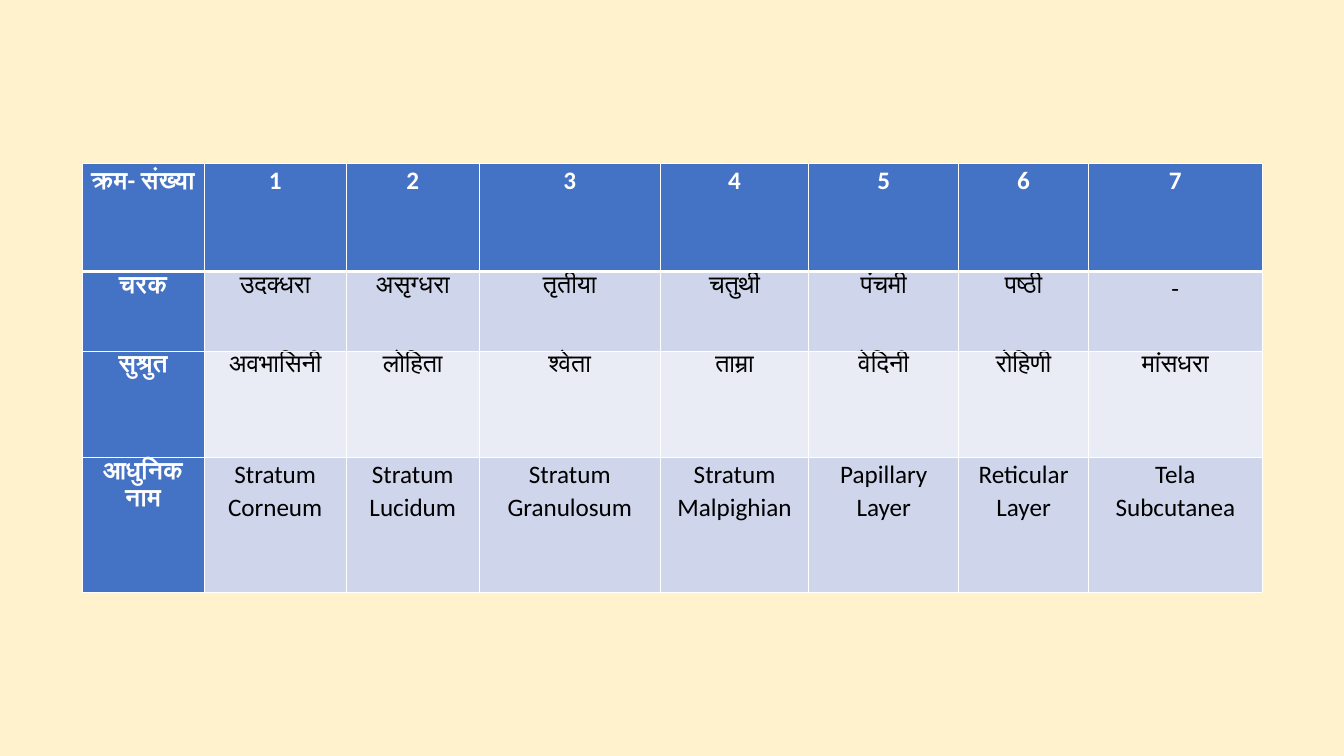
from dataclasses import dataclass

from lxml.etree import SubElement
from pptx import Presentation
from pptx.dml.color import RGBColor as Color
from pptx.enum.text import PP_ALIGN as Align
from pptx.oxml.ns import qn
from pptx.table import _Cell as Cell
from pptx.util import Pt


# Theme
@dataclass(frozen=True)
class Theme:
    page: str = "FFF2CC"
    header: str = "4472C4"
    band_dark: str = "CFD5EA"
    band_light: str = "E9EBF5"
    light_text: str = "FFFFFF"
    dark_text: str = "000000"
    border: str = "FFFFFF"
    font: str = "Calibri"
    size: float = 28
    line_spacing: float = 1.07


THEME = Theme()


@dataclass(frozen=True)
class SkinRow:
    height: float
    fill: str
    label: str
    layers: tuple[str, ...]


# Content: the seven skin layers under three naming systems
COLUMN_WIDTHS = (136, 158.4, 148.3, 201.6, 165.6, 167, 144.7, 193.4)
ROWS = (
    SkinRow(120.2, THEME.header, "क्रम- संख्या", tuple("1234567")),
    SkinRow(88.6, THEME.band_dark, "चरक",
            ("उदक्धरा", "असृग्धरा", "तृतीया", "चतुर्थी", "पंचमी", "पष्ठी", "-")),
    SkinRow(118.8, THEME.band_light, "सुश्रुत",
            ("अवभासिनी", "लोहिता", "श्वेता", "ताम्रा", "वेदिनी", "रोहिणी", "मांसधरा")),
    SkinRow(149.8, THEME.band_dark, "आधुनिक नाम",
            ("Stratum Corneum", "Stratum Lucidum", "Stratum Granulosum",
             "Stratum Malpighian", "Papillary\nLayer", "Reticular Layer",
             "Tela Subcutanea")),
)


def write_text(cell: Cell, text: str, *, color: str, bold: bool) -> None:
    cell.margin_left = cell.margin_right = Pt(7.2)
    cell.margin_top = cell.margin_bottom = Pt(0)
    cell.text_frame.text = text
    for para in cell.text_frame.paragraphs:
        para.alignment = Align.CENTER
        para.line_spacing = THEME.line_spacing
        for span in para.runs:
            span.font.name = THEME.font
            span.font.size = Pt(THEME.size)
            span.font.bold = bold
            span.font.color.rgb = Color.from_string(color)


def draw_borders(cell: Cell, top: float, bottom: float) -> None:
    properties = cell._tc.get_or_add_tcPr()
    for side, width in (("L", 1), ("R", 1), ("T", top), ("B", bottom)):
        line = SubElement(properties, qn(f"a:ln{side}"), w=str(Pt(width)))
        fill = SubElement(line, qn("a:solidFill"))
        SubElement(fill, qn("a:srgbClr"), val=THEME.border)


def main() -> None:
    # Page
    deck = Presentation()
    deck.slide_width, deck.slide_height = Pt(1497.6), Pt(842.4)
    page = deck.slides.add_slide(deck.slide_layouts[6])
    page.background.fill.solid()
    page.background.fill.fore_color.rgb = Color.from_string(THEME.page)

    # Table grid
    table = page.shapes.add_table(
        len(ROWS), len(COLUMN_WIDTHS), Pt(91.4), Pt(182.2),
        Pt(sum(COLUMN_WIDTHS)), Pt(sum(row.height for row in ROWS))).table
    table.first_col = True
    for column, width in zip(table.columns, COLUMN_WIDTHS):
        column.width = Pt(width)

    # Cells
    for row_index, row in enumerate(ROWS):
        table.rows[row_index].height = Pt(row.height)
        for column_index, text in enumerate((row.label, *row.layers)):
            cell = table.cell(row_index, column_index)
            heading = row_index == 0 or column_index == 0
            write_text(cell, text, bold=heading,
                       color=THEME.light_text if heading else THEME.dark_text)
            draw_borders(cell, top=3 if row_index == 1 else 1,
                         bottom=3 if row_index == 0 else 1)
            cell.fill.solid()
            cell.fill.fore_color.rgb = Color.from_string(
                THEME.header if heading else row.fill)

    deck.save("out.pptx")


if __name__ == "__main__":
    main()
